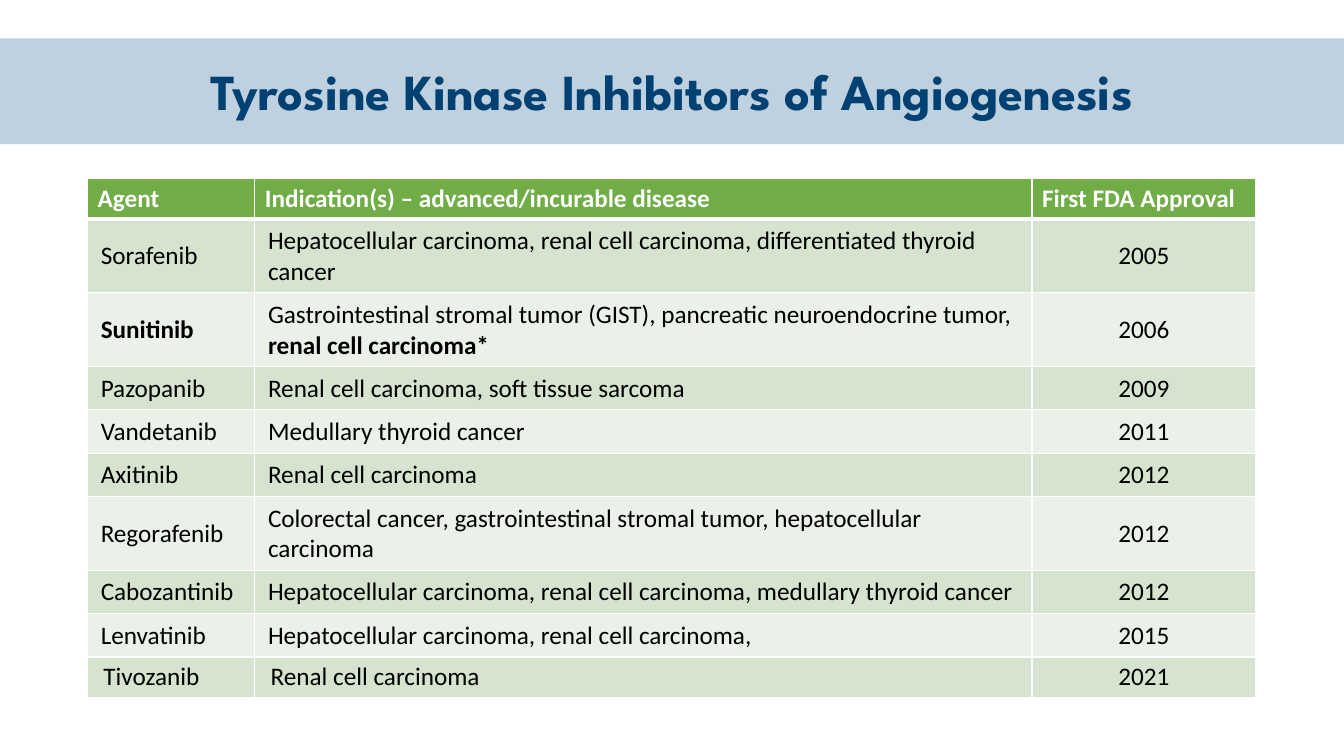
from lxml import etree
from pptx import Presentation, util as u
from pptx.dml.color import RGBColor
from pptx.enum import shapes, text
from pptx.oxml.ns import qn

# Content
TITLE = "Tyrosine Kinase Inhibitors of Angiogenesis"
HEADINGS = ("Agent", "Indication(s) – advanced/incurable disease", "First FDA Approval")
# Agent, indications, emphasised indication, year of approval
AGENTS = [
    ("Sorafenib", "Hepatocellular carcinoma, renal cell carcinoma, differentiated thyroid cancer", "", "2005"),
    ("Sunitinib", "Gastrointestinal stromal tumor (GIST), pancreatic neuroendocrine tumor, ",
     "renal cell carcinoma*", "2006"),
    ("Pazopanib", "Renal cell carcinoma, soft tissue sarcoma", "", "2009"),
    ("Vandetanib", "Medullary thyroid cancer", "", "2011"),
    ("Axitinib", "Renal cell carcinoma", "", "2012"),
    ("Regorafenib", "Colorectal cancer, gastrointestinal stromal tumor, hepatocellular carcinoma", "", "2012"),
    ("Cabozantinib", "Hepatocellular carcinoma, renal cell carcinoma, medullary thyroid cancer", "", "2012"),
    ("Lenvatinib", "Hepatocellular carcinoma, renal cell carcinoma,", "", "2015"),
    ("Tivozanib", "Renal cell carcinoma", "", "2021"),
]
COLOURS = {"band": "00497F", "title": "004174", "header": "70AD47", "odd": "D5E3CF",
           "even": "EBF1E9", "white": "FFFFFF", "black": "000000"}
COLUMN_WIDTHS = (119.5, 555.1, 159.8)
ROW_HEIGHT = 29.2


def rgb(name):
    return RGBColor.from_string(COLOURS[name])


def format_span(span, font, size, colour, bold):
    span.font.name, span.font.size = font, u.Pt(size)
    span.font.color.rgb, span.font.bold = rgb(colour), bold


def set_borders(cell, top, bottom):
    properties = cell._tc.get_or_add_tcPr()
    sides = (("a:lnL", 1), ("a:lnR", 1), ("a:lnT", top), ("a:lnB", bottom))
    for place, (tag, width) in enumerate(sides):
        line = etree.Element(qn(tag), w=str(u.Pt(width)))
        fill = etree.SubElement(line, qn("a:solidFill"))
        etree.SubElement(fill, qn("a:srgbClr"), val=COLOURS["white"])
        properties.insert(place, line)


def fill_cell(cell, words, fill, colour, bold, tail=""):
    cell.fill.solid()
    cell.fill.fore_color.rgb = rgb(fill)
    cell.text_frame.text = words
    para = cell.text_frame.paragraphs[0]
    format_span(para.runs[0], "Calibri", 18, colour, bold)
    if tail:
        span = para.add_run()
        span.text = tail
        format_span(span, "Calibri", 18, colour, True)


def add_title(page, width):
    band = page.shapes.add_shape(shapes.MSO_SHAPE.RECTANGLE, 0, u.Pt(27.4), width, u.Pt(75.6))
    band.shadow.inherit = False
    band.fill.solid()
    band.fill.fore_color.rgb = rgb("band")
    shade = band.fill._xPr.find(".//" + qn("a:srgbClr"))
    etree.SubElement(shade, qn("a:alpha"), val="25000")
    band.line.fill.background()

    box = page.shapes.add_textbox(u.Pt(110.9), u.Pt(39.6), u.Pt(738), u.Pt(51.1))
    box.text_frame.word_wrap = True
    box.text_frame.text = TITLE
    para = box.text_frame.paragraphs[0]
    para.alignment = text.PP_ALIGN.CENTER
    format_span(para.runs[0], "League Spartan", 36, "title", True)


def add_agent_table(page):
    count = len(AGENTS) + 1
    table = page.shapes.add_table(count, len(HEADINGS), u.Pt(62.6), u.Pt(127.4),
                                  u.Pt(sum(COLUMN_WIDTHS)), u.Pt(count * ROW_HEIGHT)).table
    for column, width in zip(table.columns, COLUMN_WIDTHS):
        column.width = u.Pt(width)
    for row in table.rows:
        row.height = u.Pt(ROW_HEIGHT)

    # Header row
    for column, heading in enumerate(HEADINGS):
        cell = table.cell(0, column)
        fill_cell(cell, heading, "header", "white", True)
        set_borders(cell, 1, 3)

    # Agent rows, in alternating shades; the last one is tighter
    for number, (agent, indication, emphasis, year) in enumerate(AGENTS, 1):
        shade = "odd" if number % 2 else "even"
        last = number == len(AGENTS)
        cells = [table.cell(number, column) for column in range(len(HEADINGS))]
        fill_cell(cells[0], agent, shade, "black", bool(emphasis))
        fill_cell(cells[1], indication, shade, "black", False, emphasis)
        fill_cell(cells[2], year, shade, "black", False)
        cells[2].text_frame.paragraphs[0].alignment = text.PP_ALIGN.CENTER
        for cell in cells:
            cell.margin_left = cell.margin_right = u.Pt(11.3 if last else 9.4)
            cell.margin_top = cell.margin_bottom = u.Pt(3.6 if last else 4.7)
            cell.vertical_anchor = text.MSO_ANCHOR.TOP if last else text.MSO_ANCHOR.MIDDLE
            set_borders(cell, 3 if number == 1 else 1, 1)


def main():
    deck = Presentation()
    deck.slide_width, deck.slide_height = u.Pt(960), u.Pt(540)
    page = deck.slides.add_slide(deck.slide_layouts[6])
    add_title(page, deck.slide_width)
    add_agent_table(page)
    deck.save("out.pptx")


if __name__ == "__main__":
    main()
